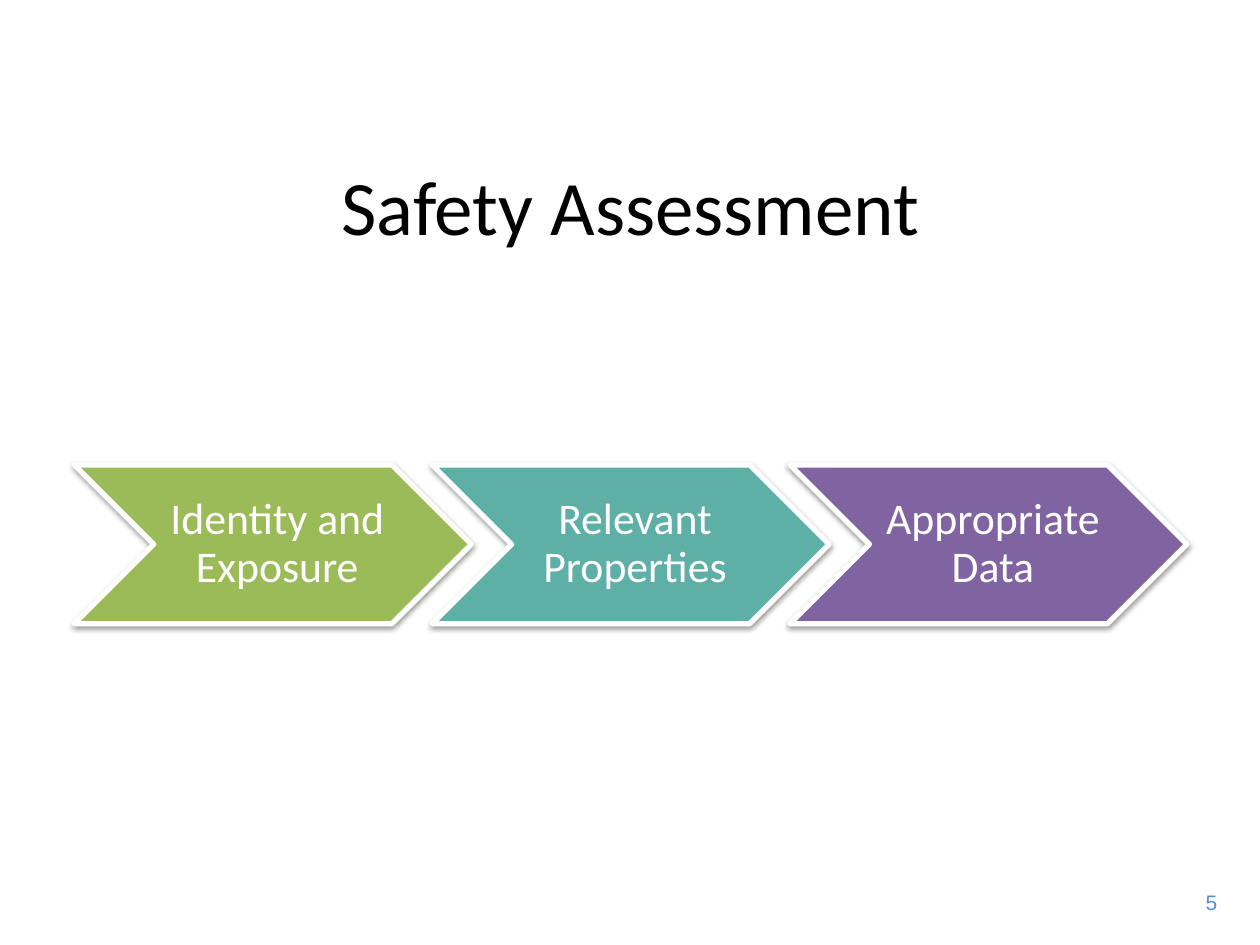
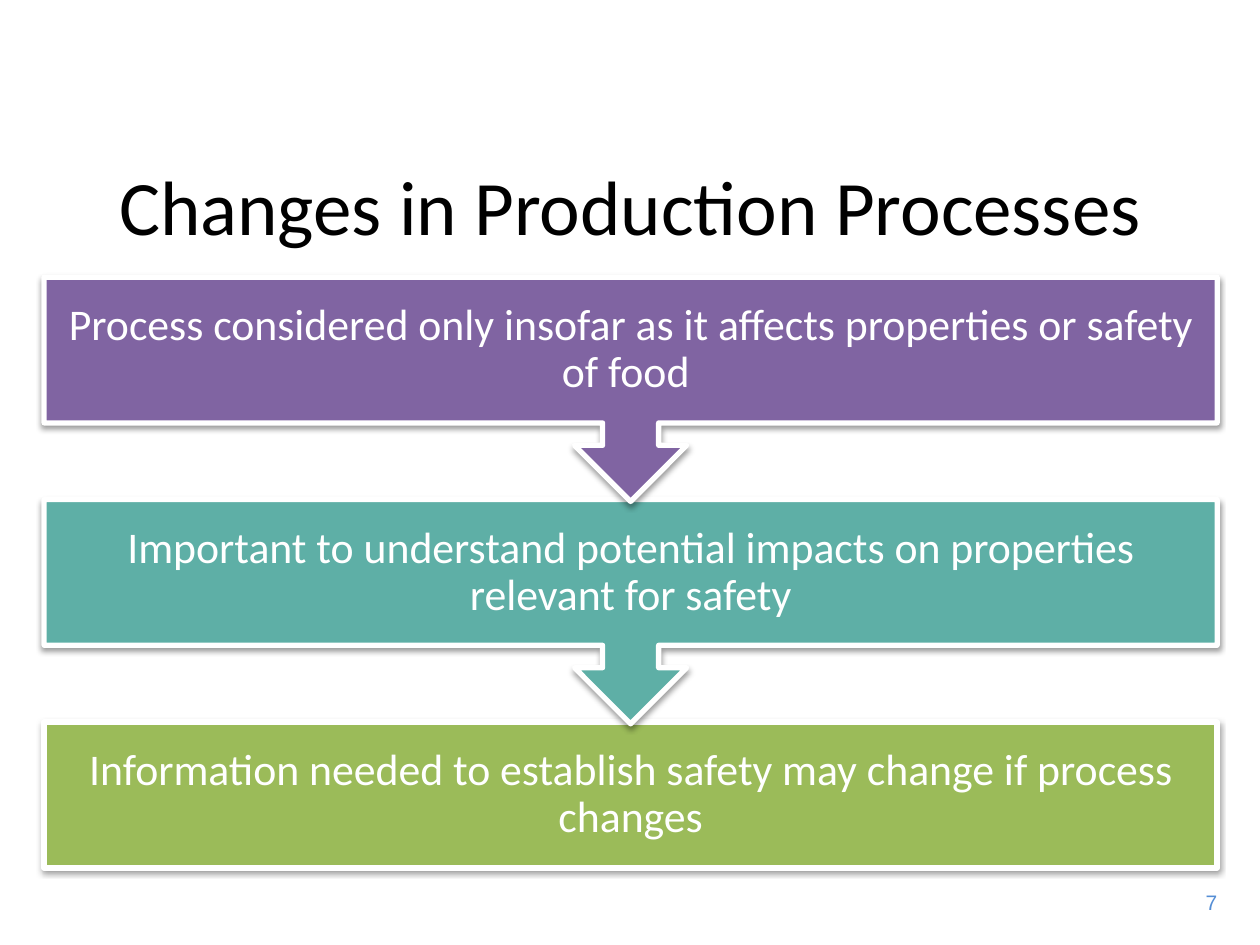
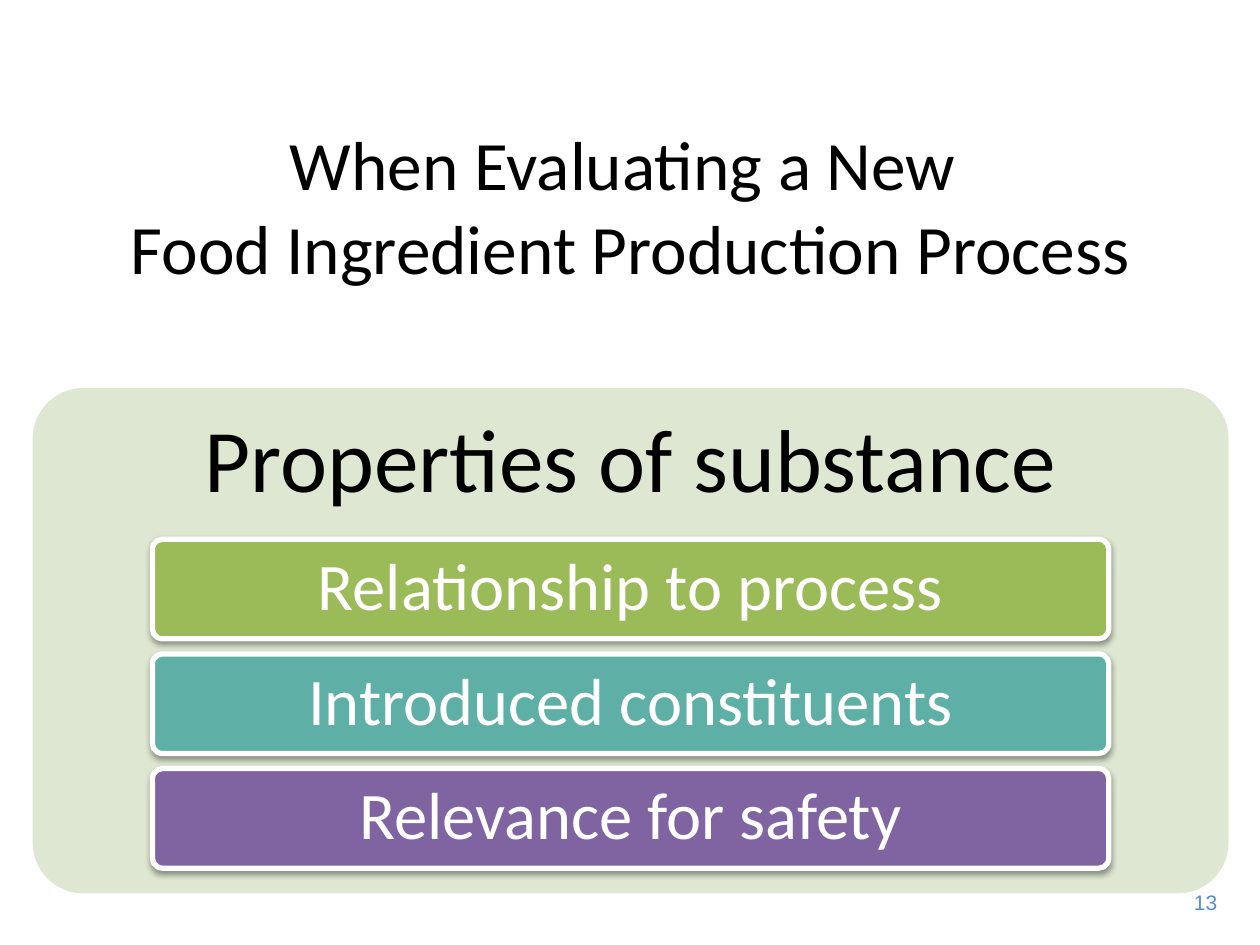
"""Build three slides on assessing the safety of food production processes."""
from lxml import etree
from pptx import Presentation
from pptx.dml.color import RGBColor
from pptx.enum import shapes, text
from pptx.oxml.ns import qn
from pptx.util import Inches, Pt

WHITE = RGBColor(0xFF, 0xFF, 0xFF)
BLACK = RGBColor(0x00, 0x00, 0x00)
GREEN = RGBColor(0x9B, 0xBB, 0x59)
TEAL = RGBColor(0x5E, 0xAF, 0xA6)
PURPLE = RGBColor(0x80, 0x64, 0xA2)
PALE_GREEN = RGBColor(0xDE, 0xE7, 0xD1)
NUMBER_BLUE = RGBColor(0x55, 0x8E, 0xD5)

ASSESSMENT_STEPS = [
    ("Identity and Exposure", GREEN),
    ("Relevant Properties", TEAL),
    ("Appropriate Data", PURPLE),
]
PROCESS_CHANGES = [
    ("Process considered only insofar as it affects properties or safety of food ", PURPLE),
    ("Important to understand potential impacts on properties relevant for safety", TEAL),
    ("Information needed to establish safety may change if process changes", GREEN),
]
SUBSTANCE_HEADING = "Properties of substance"
SUBSTANCE_TOPICS = [
    ("Relationship to process", GREEN),
    ("Introduced constituents", TEAL),
    ("Relevance for safety", PURPLE),
]


def style_text(frame, size, color, align=text.PP_ALIGN.CENTER, font="Calibri"):
    """Format every paragraph of a text frame alike."""
    for para in frame.paragraphs:
        para.alignment = align
        para.font.name = font
        para.font.size = Pt(size)
        para.font.color.rgb = color


def add_page(deck, title, number, title_size=44):
    """Add a titled slide with its page number."""
    page = deck.slides.add_slide(deck.slide_layouts[5])
    heading = page.shapes.title
    heading.left, heading.top = Inches(0.35), Inches(1.12)
    heading.width, heading.height = Inches(9.31), Inches(1.01)
    frame = heading.text_frame
    frame.text = title
    frame.auto_size = text.MSO_AUTO_SIZE.NONE
    frame.vertical_anchor = text.MSO_ANCHOR.MIDDLE
    style_text(frame, title_size, BLACK)

    box = page.shapes.add_textbox(Inches(9.35), Inches(7.01), Inches(0.41), Inches(0.3))
    frame = box.text_frame
    frame.text = str(number)
    frame.word_wrap = False
    frame.auto_size = text.MSO_AUTO_SIZE.SHAPE_TO_FIT_TEXT
    style_text(frame, 12, NUMBER_BLUE, text.PP_ALIGN.RIGHT, "Arial")
    return page


def add_block(page, kind, place, label, fill, size, insets, color=WHITE):
    """Add a filled shape with centred text inside the given insets."""
    block = page.shapes.add_shape(kind, *map(Inches, place))
    block.shadow.inherit = False
    block.fill.solid()
    block.fill.fore_color.rgb = fill
    block.line.fill.background()
    frame = block.text_frame
    frame.text = label
    frame.word_wrap = True
    frame.vertical_anchor = text.MSO_ANCHOR.MIDDLE
    (frame.margin_left, frame.margin_top,
     frame.margin_right, frame.margin_bottom) = map(Inches, insets)
    frame.paragraphs[0].line_spacing = 0.9
    style_text(frame, size, color)
    return block


def raise_block(block):
    """Give a shape a white outline and a soft shadow below it."""
    block.line.color.rgb = WHITE
    block.line.width = Pt(3)
    effects = block.element.spPr.find(qn("a:effectLst"))
    shadow = etree.SubElement(effects, qn("a:outerShdw"), blurRad="40000",
                              dist="20000", dir="5400000", rotWithShape="0")
    tint = etree.SubElement(shadow, qn("a:srgbClr"), val=str(BLACK))
    etree.SubElement(tint, qn("a:alpha"), val="38000")


def build_assessment(deck):
    """Show the assessment steps as a row of chevrons."""
    page = add_page(deck, "Safety Assessment", 5)
    for index, (label, fill) in enumerate(ASSESSMENT_STEPS):
        place = (0.59 + 2.84 * index, 3.69, 3.15, 1.26)
        raise_block(add_block(page, shapes.MSO_SHAPE.CHEVRON, place, label, fill,
                              25, (0.11, 0.04, 0.04, 0.04)))


def build_changes(deck):
    """Show the process changes as boxes pointing down, the lowest at the back."""
    page = add_page(deck, "Changes in Production Processes", 7)
    first_top, last_top = 2.2, 5.73
    last = len(PROCESS_CHANGES) - 1
    pitch = (last_top - first_top) / last
    for index, (label, fill) in reversed(list(enumerate(PROCESS_CHANGES))):
        if index == last:
            kind, height = shapes.MSO_SHAPE.RECTANGLE, 1.16
        else:
            kind, height = shapes.MSO_SHAPE.DOWN_ARROW_CALLOUT, 1.78
        place = (0.35, first_top + pitch * index, 9.31, height)
        raise_block(add_block(page, kind, place, label, fill, 25, (0.19,) * 4))


def build_evaluation(deck):
    """Show the topics stacked on a panel under its heading."""
    page = add_page(deck, "When Evaluating a New \vFood Ingredient Production Process",
                    13, 39.6)
    rounded = shapes.MSO_SHAPE.ROUNDED_RECTANGLE
    panel = add_block(page, rounded, (0.26, 3.08, 9.49, 4.01), SUBSTANCE_HEADING,
                      PALE_GREEN, 51, (0.21, 0, 0.21, 2.81), BLACK)
    panel.adjustments[0] = 0.1
    for index, (label, fill) in enumerate(SUBSTANCE_TOPICS):
        place = (1.21, 4.28 + 0.91 * index, 7.59, 0.79)
        topic = add_block(page, rounded, place, label, fill, 38, (0.11, 0.08, 0.11, 0.08))
        topic.adjustments[0] = 0.1
        raise_block(topic)


def main():
    """Build and save the deck."""
    deck = Presentation()
    deck.slide_width, deck.slide_height = Inches(10), Inches(7.5)
    build_assessment(deck)
    build_changes(deck)
    build_evaluation(deck)
    deck.save("out.pptx")


if __name__ == "__main__":
    main()
